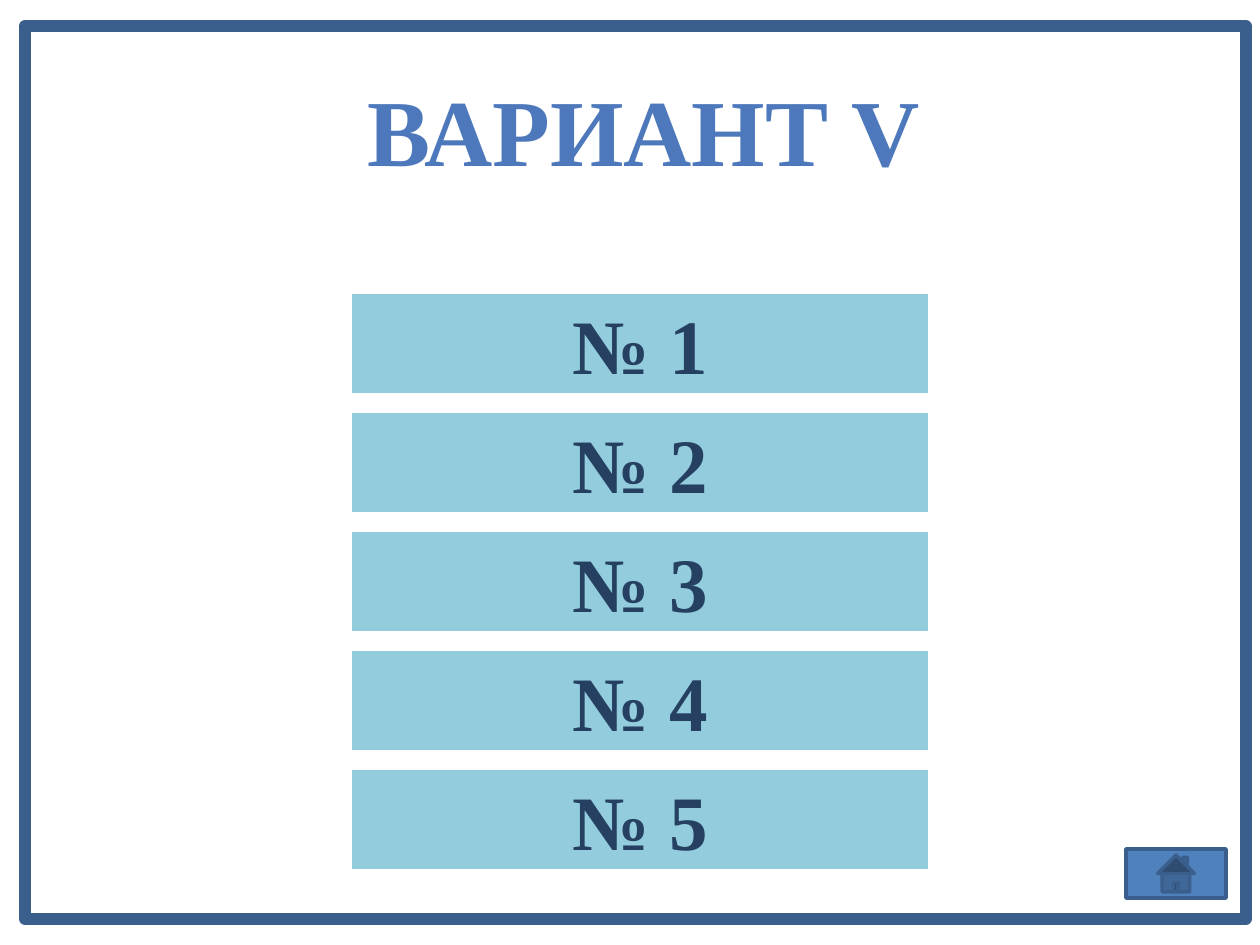
from pptx import Presentation
from pptx.dml.color import RGBColor
from pptx.enum.shapes import MSO_SHAPE
from pptx.enum.text import MSO_ANCHOR, PP_ALIGN
from pptx.util import Emu, Pt

RECT = MSO_SHAPE.RECTANGLE
BLANK_BUTTON = MSO_SHAPE.ACTION_BUTTON_CUSTOM
HOME_BUTTON = MSO_SHAPE.ACTION_BUTTON_HOME
CENTER = PP_ALIGN.CENTER
MIDDLE = MSO_ANCHOR.MIDDLE
PX = 914400 / 126


def box(*lengths):
    return [Emu(round(n * PX)) for n in lengths]


def paint(target, color):
    target.solid()
    target.fore_color.rgb = RGBColor.from_string(color)


prs = Presentation()
prs.slide_width, prs.slide_height = box(1260, 945)
slide = prs.slides.add_slide(prs.slide_layouts[6])
shapes = slide.shapes

# Frame, task buttons and home button
frame = shapes.add_shape(RECT, *box(25, 26, 1221, 893))
title = shapes.add_textbox(*box(353, 66, 582, 127))
tasks = [shapes.add_shape(BLANK_BUTTON, *box(352, 294 + 119 * i, 576, 99))
         for i in range(5)]
home = shapes.add_shape(HOME_BUTTON, *box(1126, 849, 100, 49))

for shape, fill, line_width in [
    (frame, "FFFFFF", 6.5),
    *[(task, "93CDDD", 0) for task in tasks],
    (home, "4F81BD", 2),
]:
    shape.shadow.inherit = False
    paint(shape.fill, fill)
    if line_width:
        paint(shape.line.fill, "3A5F8C")
        shape.line.width = Pt(line_width)
    else:
        shape.line.fill.background()

# Title and task labels
title_format = {"name": "Times New Roman", "size": Pt(54), "bold": True}
task_format = {**title_format, "size": Pt(44)}
labels = [(title, "ВАРИАНТ V", title_format, "4D79BC")]
labels += [(task, f"№ {number}", task_format, "254061")
           for number, task in enumerate(tasks, 1)]

for shape, text, text_format, color in labels:
    paragraph = shape.text_frame.paragraphs[0]
    paragraph.alignment = CENTER
    run = paragraph.add_run()
    run.text = text
    for key, value in text_format.items():
        setattr(run.font, key, value)
    paint(run.font.fill, color)

title.text_frame.word_wrap = False
for task in tasks:
    task.text_frame.vertical_anchor = MIDDLE

prs.save("out.pptx")
